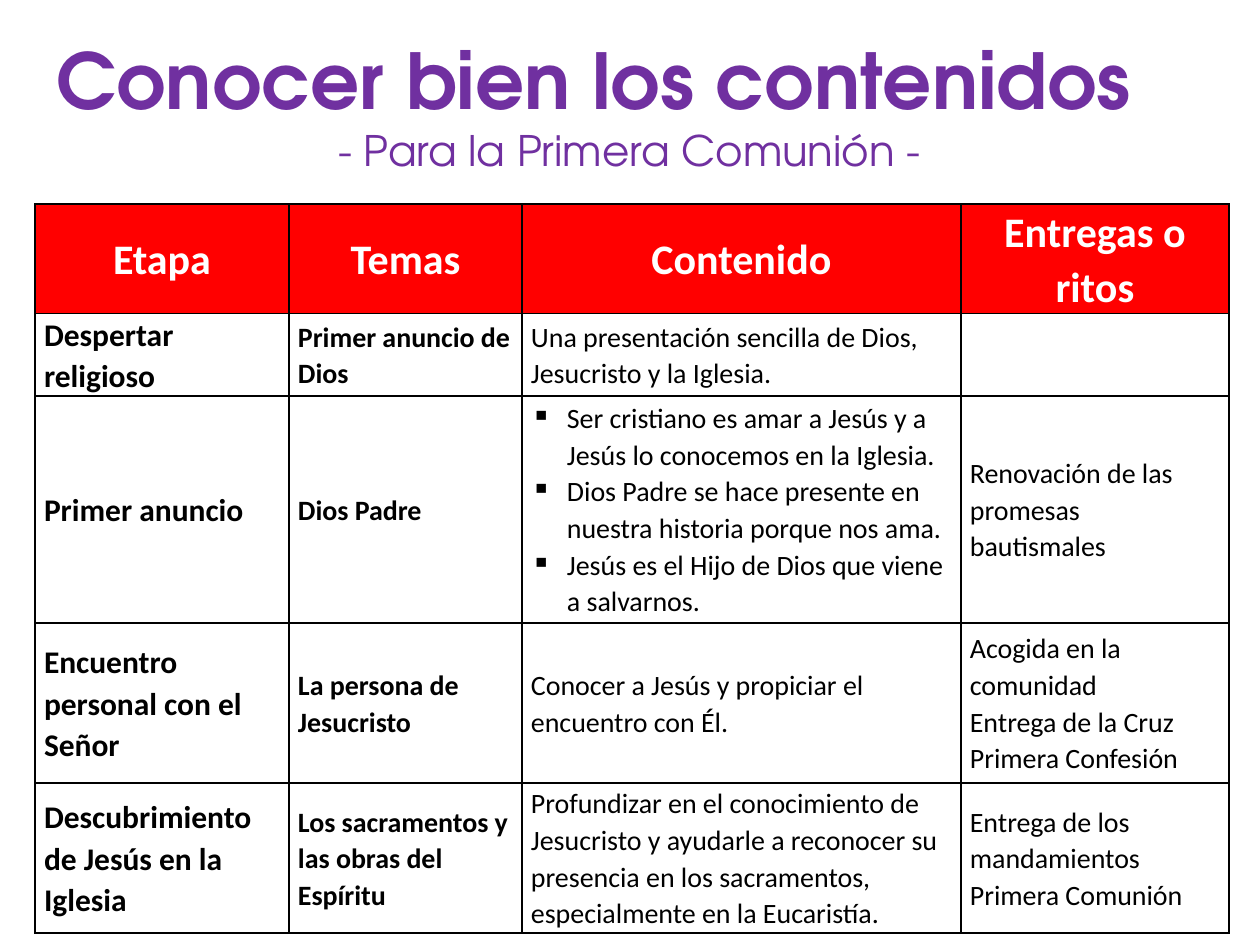
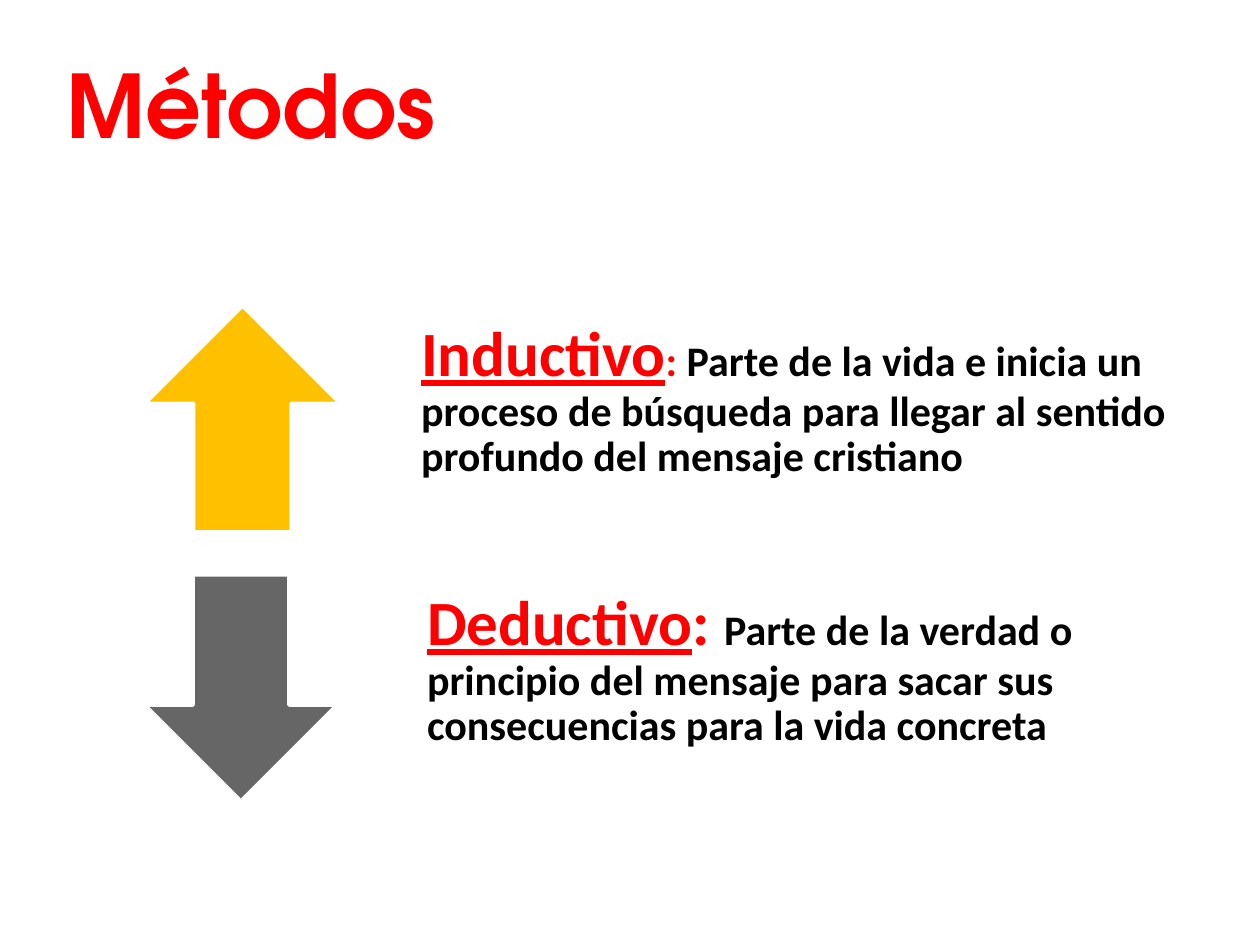
from lxml import etree
from pptx import Presentation
from pptx.dml.color import RGBColor
from pptx.enum.shapes import MSO_SHAPE
from pptx.enum.text import MSO_ANCHOR, MSO_AUTO_SIZE, PP_ALIGN
from pptx.oxml.ns import qn
from pptx.util import Pt

UP_ARROW = MSO_SHAPE.UP_ARROW
TOP, MIDDLE = MSO_ANCHOR.TOP, MSO_ANCHOR.MIDDLE
LEFT, CENTER = PP_ALIGN.LEFT, PP_ALIGN.CENTER

PX = 914400 / 126
TITLE_FONT, BODY_FONT = "TeX Gyre Adventor", "Calibri"
PURPLE = RGBColor(0x70, 0x30, 0xA0)
RED = RGBColor(0xFF, 0x00, 0x00)
AMBER = RGBColor(0xFF, 0xC0, 0x00)
GREY = RGBColor(0x66, 0x66, 0x66)
BLACK = RGBColor(0x00, 0x00, 0x00)
WHITE = RGBColor(0xFF, 0xFF, 0xFF)

# Slide 1: each cell is a list of paragraphs
CONTENTS_TITLE = [("Conocer bien los contenidos", 44, True, LEFT),
                  ("- Para la Primera Comunión -", 24, False, CENTER)]
STAGES = [
    [["Etapa"], ["Temas"], ["Contenido"], ["Entregas o ritos"]],
    [["Despertar religioso"], ["Primer anuncio de Dios"],
     ["Una presentación sencilla de Dios, Jesucristo y la Iglesia."], []],
    [["Primer anuncio"], ["Dios Padre"],
     ["Ser cristiano es amar a Jesús y a Jesús lo conocemos en la Iglesia.",
      "Dios Padre se hace presente en nuestra historia porque nos ama.",
      "Jesús es el Hijo de Dios que viene a salvarnos."],
     ["Renovación de las promesas bautismales"]],
    [["Encuentro personal con el Señor"], ["La persona de Jesucristo"],
     ["Conocer a Jesús y propiciar el encuentro con Él."],
     ["Acogida en la comunidad", "Entrega de la Cruz", "Primera Confesión"]],
    [["Descubrimiento de Jesús en la Iglesia"],
     ["Los sacramentos y las obras del Espíritu"],
     ["Profundizar en el conocimiento de Jesucristo y ayudarle a reconocer "
      "su presencia en los sacramentos, especialmente en la Eucaristía."],
     ["Entrega de los mandamientos", "Primera Comunión"]],
]
STAGES_LEFT, STAGES_TOP = 35, 204
COLUMN_WIDTHS = [254, 233, 439, 268]
ROW_HEIGHTS = [103, 74, 227, 160, 150]
COLUMN_STYLES = [(18, True), (16, True), (16, False), (16, False)]
HEADER_STYLE = (24, True)
CONTENT_COLUMN = 2

# Slide 2
METHODS_TITLE = [("Métodos", 50, True, LEFT)]
METHODS = [
    dict(name="Inductivo", colon_size=24, top=306, arrow_width=195,
         text_left=386, text_width=840, color=AMBER, rotation=0,
         meaning="Parte de la vida e inicia un proceso de búsqueda para "
                 "llegar al sentido profundo del mensaje cristiano"),
    dict(name="Deductivo", colon_size=36, top=575, arrow_width=192,
         text_left=392, text_width=760, color=GREY, rotation=180,
         meaning="Parte de la verdad o principio del mensaje para sacar sus "
                 "consecuencias para la vida concreta"),
]
ARROW_LEFT, METHOD_HEIGHT, METHOD_INSET = 145, 226, 35


def px(*lengths):
    return [round(length * PX) for length in lengths]


def style(font, name, size, color, bold):
    font.name, font.size, font.bold = name, Pt(size), bold
    font.color.rgb = color


def set_title(slide, lines, box, color, anchor):
    title = slide.shapes.title
    title.left, title.top, title.width, title.height = px(*box)
    frame = title.text_frame
    frame.auto_size = MSO_AUTO_SIZE.NONE
    frame.vertical_anchor = anchor
    frame.text = "\n".join(line[0] for line in lines)
    for paragraph, (_, size, bold, align) in zip(frame.paragraphs, lines):
        paragraph.alignment = align
        style(paragraph.runs[0].font, TITLE_FONT, size, color, bold)


def add_bullet(paragraph):
    properties = paragraph._p.get_or_add_pPr()
    indent, = px(36)
    properties.set("marL", str(indent))
    properties.set("indent", str(-indent))
    etree.SubElement(properties, qn("a:buChar")).set("char", "▪")


def add_borders(cell):
    properties = cell._tc.get_or_add_tcPr()
    for side in ("lnL", "lnR", "lnT", "lnB"):
        line = etree.SubElement(properties, qn(f"a:{side}"), w=str(Pt(1)))
        fill = etree.SubElement(line, qn("a:solidFill"))
        etree.SubElement(fill, qn("a:srgbClr"), val=str(BLACK))


def fill_cell(cell, lines, text_style, is_header):
    add_borders(cell)
    cell.fill.solid()
    cell.fill.fore_color.rgb = RED if is_header else WHITE
    cell.vertical_anchor = MIDDLE
    cell.margin_left, cell.margin_right = px(9, 9)
    cell.margin_top = cell.margin_bottom = 0
    cell.text = "\n".join(lines)
    size, bold = text_style
    for paragraph in cell.text_frame.paragraphs:
        paragraph.line_spacing = 1.07
        paragraph.alignment = CENTER if is_header else LEFT
        for run in paragraph.runs:
            style(run.font, BODY_FONT, size, WHITE if is_header else BLACK, bold)


def add_stages(slide):
    box = px(STAGES_LEFT, STAGES_TOP, sum(COLUMN_WIDTHS), sum(ROW_HEIGHTS))
    table = slide.shapes.add_table(len(STAGES), len(COLUMN_WIDTHS), *box).table
    table.first_row = table.horz_banding = False
    for column, width in zip(table.columns, px(*COLUMN_WIDTHS)):
        column.width = width
    for row, height in zip(table.rows, px(*ROW_HEIGHTS)):
        row.height = height
    for r, stage in enumerate(STAGES):
        for c, lines in enumerate(stage):
            cell = table.cell(r, c)
            fill_cell(cell, lines, COLUMN_STYLES[c] if r else HEADER_STYLE, r == 0)
            if c == CONTENT_COLUMN and len(lines) > 1:
                for paragraph in cell.text_frame.paragraphs:
                    add_bullet(paragraph)


def add_method(slide, method):
    top = method["top"]
    arrow = slide.shapes.add_shape(
        UP_ARROW, *px(ARROW_LEFT, top, method["arrow_width"], METHOD_HEIGHT))
    arrow.rotation = method["rotation"]
    arrow.shadow.inherit = False
    arrow.fill.solid()
    arrow.fill.fore_color.rgb = method["color"]
    arrow.line.color.rgb = WHITE
    arrow.line.width = Pt(2)

    definition = slide.shapes.add_textbox(
        *px(method["text_left"], top, method["text_width"], METHOD_HEIGHT))
    frame = definition.text_frame
    frame.word_wrap = True
    frame.vertical_anchor = MIDDLE
    frame.margin_left, frame.margin_right, frame.margin_bottom = px(*[METHOD_INSET] * 3)
    frame.margin_top = 0
    paragraph = frame.paragraphs[0]
    paragraph.line_spacing = 0.9
    parts = [(method["name"], 36, RED, True),
             (": ", method["colon_size"], RED, False),
             (method["meaning"], 24, BLACK, False)]
    for text, size, color, underline in parts:
        run = paragraph.add_run()
        run.text = text
        style(run.font, BODY_FONT, size, color, True)
        run.font.underline = underline


def main():
    deck = Presentation()
    deck.slide_width, deck.slide_height = px(1260, 945)
    title_only = deck.slide_layouts.get_by_name("Title Only")

    contents = deck.slides.add_slide(title_only)
    set_title(contents, CONTENTS_TITLE, (44, 26, 1171, 158), PURPLE, TOP)
    add_stages(contents)

    methods = deck.slides.add_slide(title_only)
    set_title(methods, METHODS_TITLE, (54, 29, 1032, 149), RED, MIDDLE)
    for method in METHODS:
        add_method(methods, method)

    deck.save("out.pptx")


if __name__ == "__main__":
    main()
